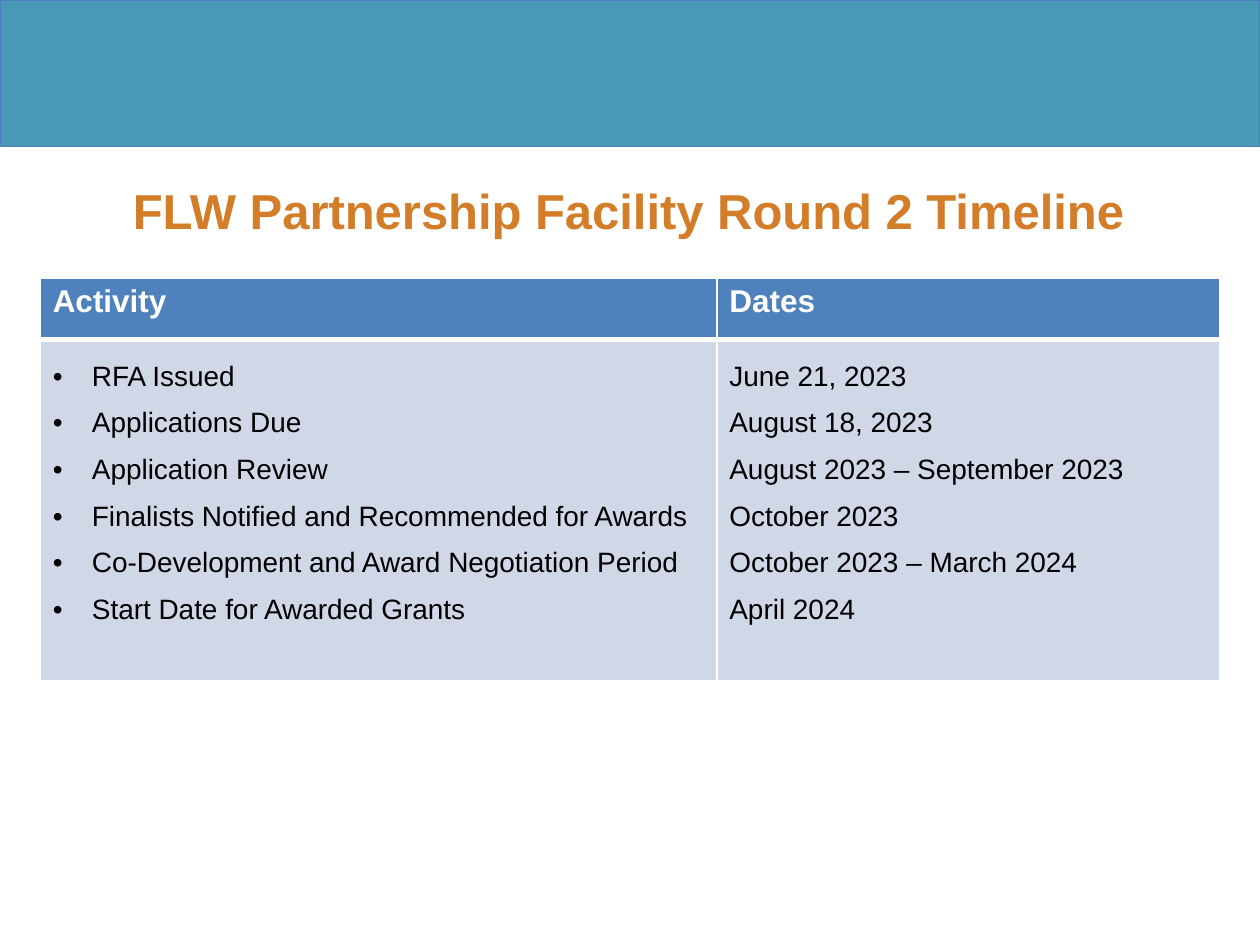
from lxml.etree import SubElement
from pptx import Presentation
from pptx.dml.color import RGBColor
from pptx.enum.shapes import MSO_SHAPE
from pptx.enum.text import MSO_ANCHOR, PP_ALIGN
from pptx.oxml.ns import qn
from pptx.util import Cm, Pt

TIMELINE = [
    ("RFA Issued", "June 21, 2023"),
    ("Applications Due", "August 18, 2023"),
    ("Application Review", "August 2023 – September 2023"),
    ("Finalists Notified and Recommended for Awards", "October 2023"),
    ("Co-Development and Award Negotiation Period", "October 2023 – March 2024"),
    ("Start Date for Awarded Grants", "April 2024"),
]


def color(value):
    return RGBColor.from_string(value)


class TimelineSlide:
    font_name = "Arial"
    band_fill, band_line = "4799B5", "4B7EBC"
    title_color = "D37D28"
    header_fill, body_fill = "4F81BD", "D0D8E8"
    white, black = "FFFFFF", "000000"

    def __init__(self, presentation):
        self.slide = presentation.slides.add_slide(presentation.slide_layouts[5])

    def set_font(self, paragraph, size, font_color, bold=False):
        font = paragraph.font
        font.name, font.size, font.bold = self.font_name, Pt(size), bold
        font.color.rgb = color(font_color)

    def band(self, width, height):
        shape = self.slide.shapes.add_shape(MSO_SHAPE.RECTANGLE, 0, 0, width, height)
        shape.shadow.inherit = False
        shape.fill.solid()
        shape.fill.fore_color.rgb = color(self.band_fill)
        shape.line.color.rgb = color(self.band_line)
        shape.line.width = Pt(0.75)

    def title(self, text, left, top, width, height):
        title = self.slide.shapes.title
        title.left, title.top, title.width, title.height = left, top, width, height
        frame = title.text_frame
        frame.text = text
        frame.vertical_anchor = MSO_ANCHOR.MIDDLE
        paragraph = frame.paragraphs[0]
        paragraph.alignment = PP_ALIGN.CENTER
        self.set_font(paragraph, 28, self.title_color, bold=True)

    def table(self, left, top, widths, heights):
        frame = self.slide.shapes.add_table(
            len(heights), len(widths), left, top, sum(widths), sum(heights))
        table = frame.table
        for column, width in zip(table.columns, widths):
            column.width = width
        for row, height in zip(table.rows, heights):
            row.height = height
        return table

    def borders(self, cell, **widths):
        properties = cell._tc.get_or_add_tcPr()
        for side in ("L", "R", "T", "B"):
            line = SubElement(properties, qn(f"a:ln{side}"), w=str(Pt(widths.get(side, 1))))
            fill = SubElement(line, qn("a:solidFill"))
            SubElement(fill, qn("a:srgbClr"), val=self.white)

    def fill_cell(self, cell, fill):
        cell.fill.solid()
        cell.fill.fore_color.rgb = color(fill)

    def header_cell(self, cell, text):
        self.borders(cell, B=3)
        self.fill_cell(cell, self.header_fill)
        cell.text = text
        self.set_font(cell.text_frame.paragraphs[0], 18, self.white, bold=True)

    def body_cell(self, cell, lines, bulleted):
        self.borders(cell, T=3)
        self.fill_cell(cell, self.body_fill)
        cell.text = "\n".join(lines)
        for paragraph in cell.text_frame.paragraphs:
            paragraph.line_spacing = 1.5
            if bulleted:
                self.bullet(paragraph, Cm(0.79))
            self.set_font(paragraph, 16, self.black)

    def bullet(self, paragraph, indent):
        properties = paragraph._p.get_or_add_pPr()
        properties.set("marL", str(indent))
        properties.set("indent", str(-indent))
        SubElement(properties, qn("a:buFont"), typeface=self.font_name)
        SubElement(properties, qn("a:buChar"), char="•")


def main():
    presentation = Presentation()
    presentation.slide_width, presentation.slide_height = Cm(25.4), Cm(19.05)
    page = TimelineSlide(presentation)

    # Top band and title
    page.band(presentation.slide_width, Cm(2.95))
    page.title("FLW Partnership Facility Round 2 Timeline",
               Cm(1.24), Cm(3.4), Cm(22.86), Cm(1.65))

    # Timeline table: one bulleted column of activities, one of dates
    table = page.table(Cm(0.81), Cm(5.6), [Cm(13.64), Cm(10.13)], [Cm(1.24), Cm(6.88)])
    for index, heading in enumerate(("Activity", "Dates")):
        page.header_cell(table.cell(0, index), heading)
        lines = [entry[index] for entry in TIMELINE]
        page.body_cell(table.cell(1, index), lines, bulleted=index == 0)

    presentation.save("out.pptx")


if __name__ == "__main__":
    main()
